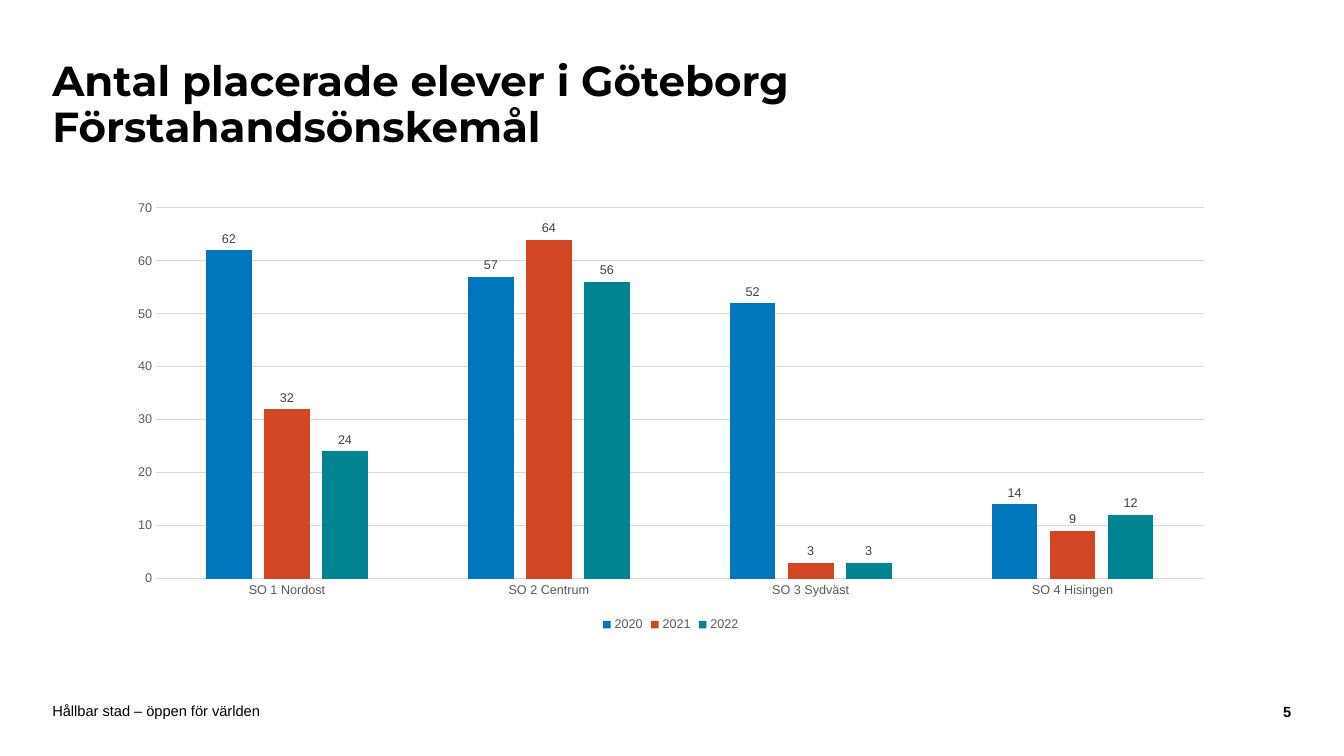
"""Builds a slide with a column chart of pupils placed in Göteborg."""
from pptx import Presentation
from pptx.chart.data import CategoryChartData
from pptx.dml.color import RGBColor
from pptx.enum.chart import XL_CHART_TYPE, XL_LABEL_POSITION, XL_LEGEND_POSITION, XL_TICK_MARK
from pptx.enum.text import MSO_ANCHOR, PP_ALIGN
from pptx.util import Cm, Pt


def paint(font, size, color, name="Arial", bold=False):
    font.size = Pt(size)
    font.name = name
    font.bold = bold
    font.color.rgb = RGBColor.from_string(color)


def write(box, lines, size, name="Arial", bold=False, align=PP_ALIGN.LEFT, pad=0):
    frame = slide.shapes.add_textbox(*[Cm(n) for n in box]).text_frame
    frame.word_wrap = True
    frame.vertical_anchor = MSO_ANCHOR.MIDDLE
    frame.margin_left = frame.margin_right = 0
    frame.margin_top = frame.margin_bottom = Cm(pad)
    para = frame.paragraphs[0]
    para.alignment = align
    for i, line in enumerate(lines):
        if i:
            para.add_line_break()
        run = para.add_run()
        run.text = line
        paint(run.font, size, "000000", name, bold)
    return para


deck = Presentation()
deck.slide_width, deck.slide_height = Cm(33.87), Cm(19.05)
slide = deck.slides.add_slide(deck.slide_layouts[6])

title = write((1.32, 1.07, 25.48, 3.2),
              ["Antal placerade elever i Göteborg", "Förstahandsönskemål"],
              30, "Montserrat", True, pad=0.13)
title.line_spacing = 0.9

data = CategoryChartData()
data.categories = ["SO 1 Nordost", "SO 2 Centrum", "SO 3 Sydväst", "SO 4 Hisingen"]
data.add_series("2020", [62, 57, 52, 14])
data.add_series("2021", [32, 64, 3, 9])
data.add_series("2022", [24, 56, 3, 12])
chart = slide.shapes.add_chart(XL_CHART_TYPE.COLUMN_CLUSTERED, Cm(2.92), Cm(4.83),
                               Cm(27.97), Cm(11.2), data).chart
paint(chart.font, 10, "000000")
chart.has_title = False
chart.has_legend = True
chart.legend.position = XL_LEGEND_POSITION.BOTTOM
chart.legend.include_in_layout = False
paint(chart.legend.font, 9, "595959")

for axis in (chart.category_axis, chart.value_axis):
    axis.major_tick_mark = axis.minor_tick_mark = XL_TICK_MARK.NONE
    paint(axis.tick_labels.font, 9, "595959")
chart.value_axis.minimum_scale = 0
chart.value_axis.maximum_scale = 70
chart.value_axis.major_unit = 10
chart.value_axis.format.line.fill.background()
for line in (chart.category_axis.format.line, chart.value_axis.major_gridlines.format.line):
    line.width = Pt(0.75)
    line.color.rgb = RGBColor.from_string("D9D9D9")

plot = chart.plots[0]
plot.gap_width = 219
plot.overlap = -27
plot.vary_by_categories = False
for year, color in zip(plot.series, ["0077BC", "D24723", "008391"]):
    year.format.fill.solid()
    year.format.fill.fore_color.rgb = RGBColor.from_string(color)
    labels = year.data_labels
    labels.show_value = True
    labels.position = XL_LABEL_POSITION.OUTSIDE_END
    paint(labels.font, 9, "404040")

write((1.32, 17.7, 24, 0.41), ["Hållbar stad – öppen för världen"], 10.5)
write((30.91, 17.73, 1.63, 0.41), ["5"], 10.5, bold=True, align=PP_ALIGN.RIGHT)

deck.save("out.pptx")
